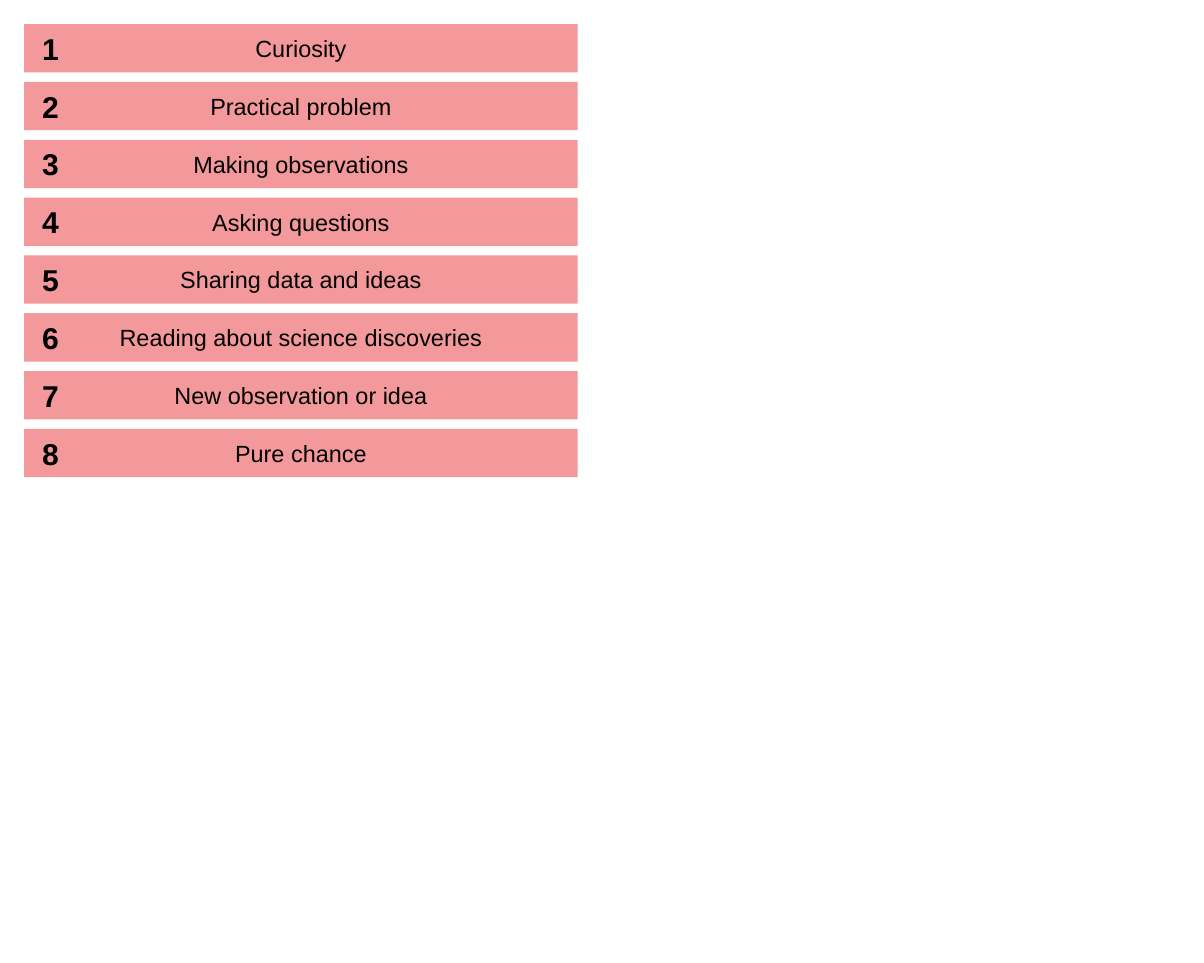
from dataclasses import dataclass

from pptx import Presentation
from pptx.dml.color import RGBColor
from pptx.enum.shapes import MSO_SHAPE
from pptx.enum.text import MSO_ANCHOR, PP_ALIGN
from pptx.util import Cm, Pt


@dataclass(frozen=True)
class Theme:
    font: str = "Arial"
    bar: RGBColor = RGBColor(0xF4, 0x99, 0x9B)
    ink: RGBColor = RGBColor(0, 0, 0)
    label_size: Pt = Pt(14)
    number_size: Pt = Pt(18)


@dataclass(frozen=True)
class Box:
    left: int
    top: int
    width: int
    height: int


THEME = Theme()
BAR_PITCH = Cm(1.22)
NUMBER_INSET = Cm(0.13)
NUMBER_WIDTH = Cm(19.05)
STARTING_POINTS = (
    "Curiosity",
    "Practical problem",
    "Making observations",
    "Asking questions",
    "Sharing data and ideas",
    "Reading about science discoveries",
    "New observation or idea",
    "Pure chance",
)


def write_text(shape, text, size, alignment, bold=False):
    frame = shape.text_frame
    frame.word_wrap = True
    frame.vertical_anchor = MSO_ANCHOR.MIDDLE
    para = frame.paragraphs[0]
    para.alignment = alignment
    span = para.add_run()
    span.text = text
    span.font.name = THEME.font
    span.font.size = size
    span.font.bold = bold
    span.font.color.rgb = THEME.ink


def add_numbered_bar(page, box, number, label):
    bar = page.shapes.add_shape(
        MSO_SHAPE.RECTANGLE, box.left, box.top, box.width, box.height
    )
    bar.shadow.inherit = False
    bar.fill.solid()
    bar.fill.fore_color.rgb = THEME.bar
    bar.line.fill.background()
    write_text(bar, label, THEME.label_size, PP_ALIGN.CENTER)

    number_box = page.shapes.add_textbox(
        box.left + NUMBER_INSET,
        box.top + NUMBER_INSET,
        NUMBER_WIDTH,
        box.height - 2 * NUMBER_INSET,
    )
    write_text(number_box, str(number), THEME.number_size, PP_ALIGN.LEFT, bold=True)


def add_bar_list(page, box, labels):
    """Stack numbered bars downwards, starting with the given first bar's box."""
    for index, label in enumerate(labels):
        bar_box = Box(box.left, box.top + index * BAR_PITCH, box.width, box.height)
        add_numbered_bar(page, bar_box, index + 1, label)


def main():
    deck = Presentation()
    deck.slide_width = Cm(25.4)
    deck.slide_height = Cm(20.32)
    page = deck.slides.add_slide(deck.slide_layouts.get_by_name("Blank"))
    first_bar = Box(Cm(0.51), Cm(0.51), Cm(11.68), Cm(1.02))
    add_bar_list(page, first_bar, STARTING_POINTS)
    deck.save("out.pptx")


if __name__ == "__main__":
    main()
